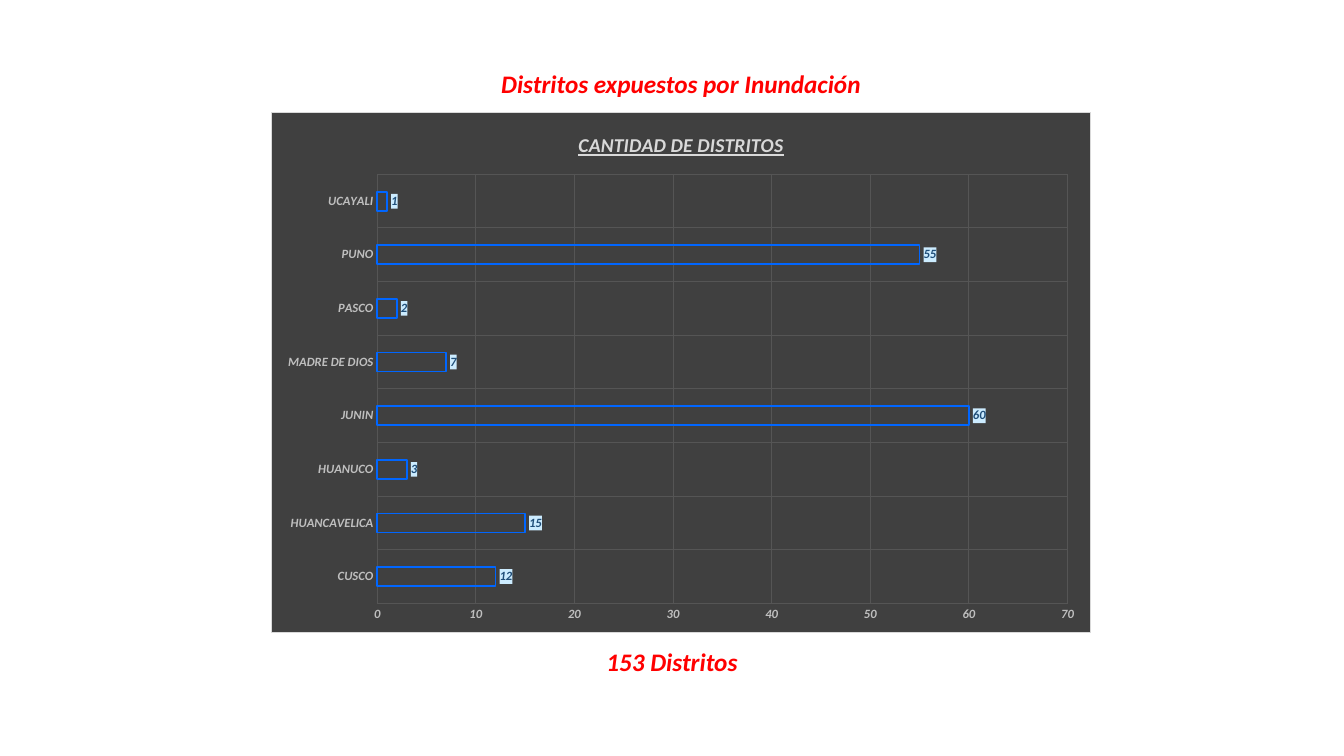
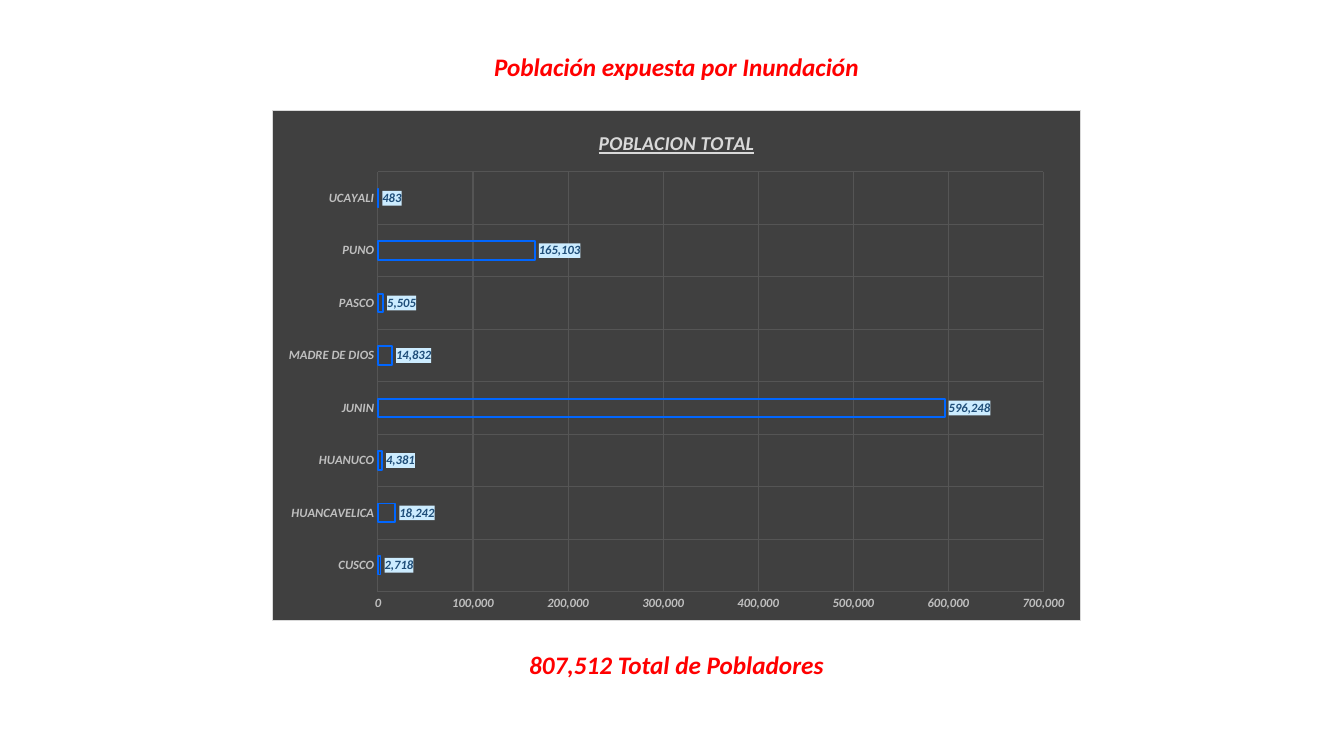
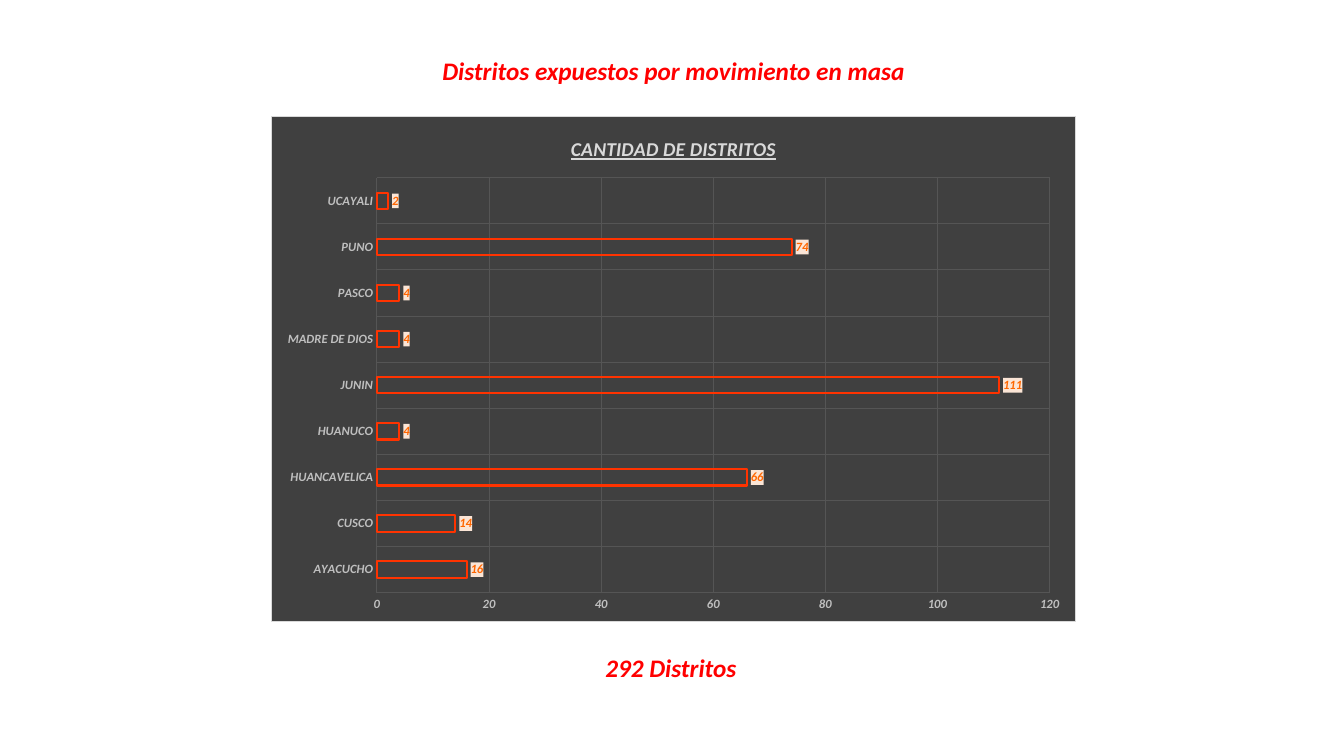
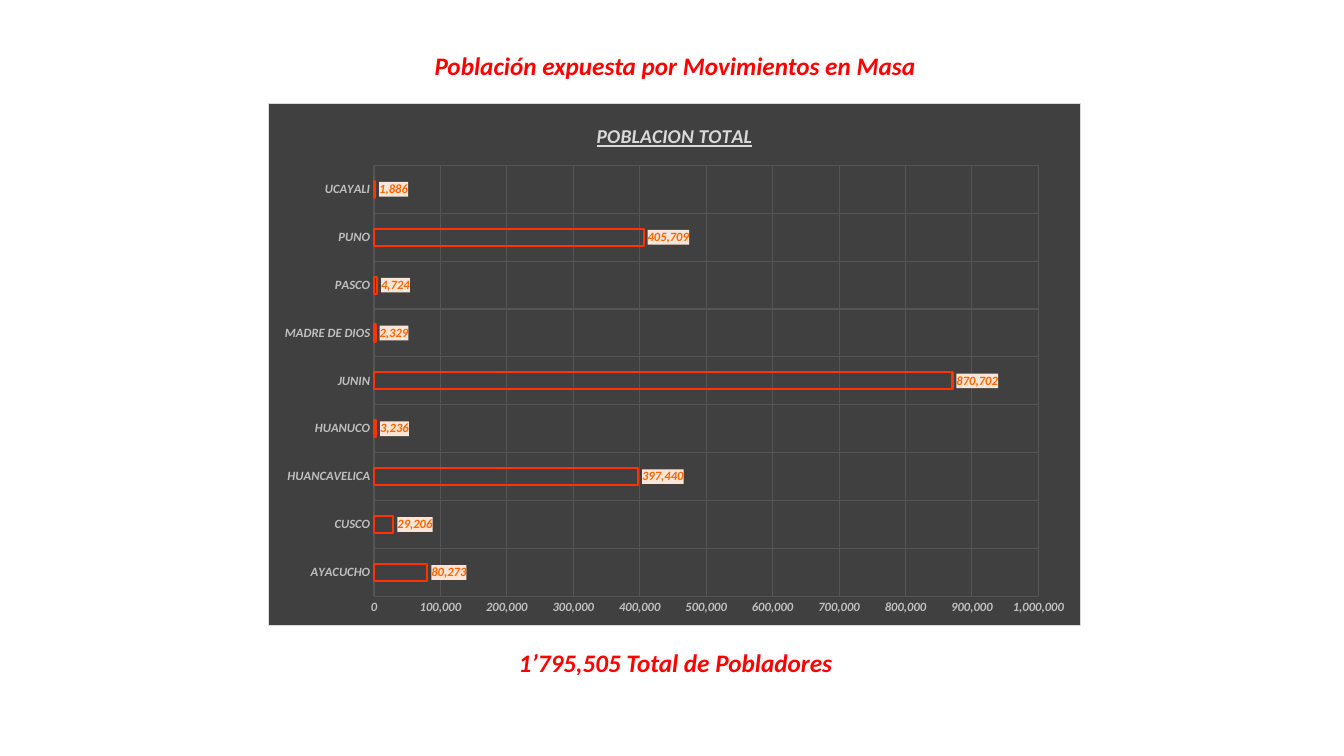
import pptx
import pptx.chart.data
import pptx.dml.color
import pptx.enum.chart
import pptx.enum.text
import pptx.oxml
import pptx.oxml.ns
import pptx.util

RGBColor = pptx.dml.color.RGBColor
RED = RGBColor(0xFF, 0x00, 0x00)
CHARCOAL = RGBColor(0x40, 0x40, 0x40)
GRID_GRAY = RGBColor(0x55, 0x55, 0x55)
AXIS_GRAY = RGBColor(0xBF, 0xBF, 0xBF)
LIGHT_GRAY = RGBColor(0xD9, 0xD9, 0xD9)
BLUE = RGBColor(0x00, 0x66, 0xFF)
NAVY = RGBColor(0x1F, 0x4E, 0x79)
PALE_BLUE = RGBColor(0xCC, 0xEC, 0xFF)
VERMILION = RGBColor(0xFF, 0x33, 0x00)
ORANGE = RGBColor(0xFF, 0x66, 0x00)
PALE_ORANGE = RGBColor(0xFB, 0xE5, 0xD6)

NUMBER_FORMAT = "#,##0"
REGIONS = ["AYACUCHO", "CUSCO", "HUANCAVELICA", "HUANUCO", "JUNIN",
           "MADRE DE DIOS", "PASCO", "PUNO", "UCAYALI"]

# Bar outline, outline width, label text, label fill
FLOOD = dict(line=BLUE, width=1.25, text=NAVY, fill=PALE_BLUE)
LANDSLIDE = dict(line=VERMILION, width=1.5, text=ORANGE, fill=PALE_ORANGE)

# Positions in grid cells: chart is left, top, width, height;
# title and total are centre, top, width.
SLIDES = [
    dict(title="Distritos expuestos por Inundación", title_at=(67.55, 6.3, 38.1),
         total="153 Distritos", total_at=(66.65, 6.36 * 10, 15.1),
         heading="CANTIDAD DE DISTRITOS", chart_at=(26.9, 11.1, 81.3, 51.7),
         regions=REGIONS[1:], values=[12, 15, 3, 60, 7, 2, 55, 1],
         top=70, step=10, look=FLOOD),
    dict(title="Población expuesta por Inundación", title_at=(67.1, 4.6, 38.6),
         total="807,512 Total de Pobladores", total_at=(67.1, 63.9, 33.6),
         heading="POBLACION TOTAL", chart_at=(27, 10.9, 80.2, 50.7),
         regions=REGIONS[1:],
         values=[2718, 18242, 4381, 596248, 14832, 5505, 165103, 483],
         top=700000, step=100000, look=FLOOD),
    dict(title="Distritos expuestos por movimiento en masa", title_at=(66.8, 5, 48.4),
         total="292 Distritos", total_at=(66.55, 64.2, 16.7),
         heading="CANTIDAD DE DISTRITOS", chart_at=(26.9, 11.5, 79.8, 50.2),
         regions=REGIONS, values=[16, 14, 66, 4, 111, 4, 4, 74, 2],
         top=120, step=20, look=LANDSLIDE),
    dict(title="Población expuesta por Movimientos en Masa", title_at=(66.95, 4.5, 50.3),
         total="1’795,505 Total de Pobladores", total_at=(67, 63.7, 33.4),
         heading="POBLACION TOTAL", chart_at=(26.6, 10.2, 80.6, 51.9),
         regions=REGIONS,
         values=[80273, 29206, 397440, 3236, 870702, 2329, 4724, 405709, 1886],
         top=1000000, step=100000, look=LANDSLIDE),
]


def set_all(target, **values):
    for name, value in values.items():
        setattr(target, name, value)


def shape_properties(fill=None, border=None):
    """Return a c:spPr element for chart parts that have no format object."""
    def paint(color):
        if color is None:
            return "<a:noFill/>"
        return f'<a:solidFill><a:srgbClr val="{color}"/></a:solidFill>'
    return pptx.oxml.parse_xml(
        f'<c:spPr {pptx.oxml.ns.nsdecls("c", "a")}>{paint(fill)}'
        f'<a:ln w="9525">{paint(border)}</a:ln></c:spPr>')


class Deck:
    CELL = pptx.util.Inches(0.1)
    TEXT_ROWS = 4
    FONT = dict(name="Calibri", bold=True, italic=True)

    def __init__(self):
        self.prs = pptx.Presentation()
        set_all(self.prs, slide_width=pptx.util.Inches(13.33),
                slide_height=pptx.util.Inches(7.5))
        self.slide = None

    def add_slide(self):
        self.slide = self.prs.slides.add_slide(self.prs.slide_layouts[5])

    def grid(self, *cells):
        return [round(cell * self.CELL) for cell in cells]

    def style_font(self, font, size, color, **extra):
        set_all(font, size=pptx.util.Pt(size), **self.FONT, **extra)
        font.color.rgb = color

    def caption(self, sp, text, at, wrap):
        centre, top, width = at
        left, top, width, height = self.grid(
            centre - width / 2, top, width, self.TEXT_ROWS)
        set_all(sp, left=left, top=top, width=width, height=height)
        tf = sp.text_frame
        set_all(tf, word_wrap=wrap,
                auto_size=pptx.enum.text.MSO_AUTO_SIZE.SHAPE_TO_FIT_TEXT,
                vertical_anchor=pptx.enum.text.MSO_ANCHOR.TOP)
        p = tf.paragraphs[0]
        p.alignment = pptx.enum.text.PP_ALIGN.CENTER
        r = p.add_run()
        r.text = text
        self.style_font(r.font, 18, RED)

    def title(self, text, at):
        self.caption(self.slide.shapes.title, text, at, wrap=False)

    def total(self, text, at):
        sp = self.slide.shapes.add_textbox(0, 0, 0, 0)
        self.caption(sp, text, at, wrap=True)

    def bar_chart(self, heading, regions, values, at, top, step, look):
        data = pptx.chart.data.CategoryChartData(number_format=NUMBER_FORMAT)
        data.categories = regions
        data.add_series("Series 1", values)
        chart = self.slide.shapes.add_chart(
            pptx.enum.chart.XL_CHART_TYPE.BAR_CLUSTERED, *self.grid(*at), data).chart
        set_all(chart.font, name="Calibri", size=pptx.util.Pt(10))
        chart.has_legend = False
        self.chart_heading(chart, heading)
        for axis in (chart.category_axis, chart.value_axis):
            self.style_axis(axis)
        set_all(chart.value_axis, minimum_scale=0, maximum_scale=top, major_unit=step)
        set_all(chart.value_axis.tick_labels, number_format=NUMBER_FORMAT,
                number_format_is_linked=False)
        set_all(chart.plots[0], gap_width=182, overlap=-50, vary_by_categories=False)
        self.style_bars(chart.plots[0].series[0], look)
        space = chart.element
        space.xpath(".//c:dLbls/c:txPr")[0].addprevious(shape_properties(look["fill"]))
        space.xpath("c:chart/c:plotArea")[0].append(shape_properties())
        space.xpath("c:chart")[0].addnext(shape_properties(CHARCOAL, LIGHT_GRAY))

    def chart_heading(self, chart, text):
        chart.has_title = True
        chart.chart_title.include_in_layout = False
        r = chart.chart_title.text_frame.paragraphs[0].add_run()
        r.text = text
        self.style_font(r.font, 14, LIGHT_GRAY, underline=True)

    def style_axis(self, axis):
        none = pptx.enum.chart.XL_TICK_MARK.NONE
        set_all(axis, has_major_gridlines=True, major_tick_mark=none,
                minor_tick_mark=none)
        axis.format.line.fill.background()
        line = axis.major_gridlines.format.line
        line.width = pptx.util.Pt(0.75)
        line.color.rgb = GRID_GRAY
        self.style_font(axis.tick_labels.font, 9, AXIS_GRAY)

    def style_bars(self, bars, look):
        bars.invert_if_negative = False
        bars.format.fill.background()
        bars.format.line.width = pptx.util.Pt(look["width"])
        bars.format.line.color.rgb = look["line"]
        labels = bars.data_labels
        set_all(labels, show_value=True, number_format=NUMBER_FORMAT,
                number_format_is_linked=False,
                position=pptx.enum.chart.XL_LABEL_POSITION.OUTSIDE_END)
        self.style_font(labels.font, 9, look["text"])


def main():
    deck = Deck()
    for s in SLIDES:
        deck.add_slide()
        deck.title(s["title"], s["title_at"])
        deck.total(s["total"], s["total_at"])
        deck.bar_chart(s["heading"], s["regions"], s["values"], s["chart_at"],
                       s["top"], s["step"], s["look"])
    deck.prs.save("out.pptx")


if __name__ == "__main__":
    main()
